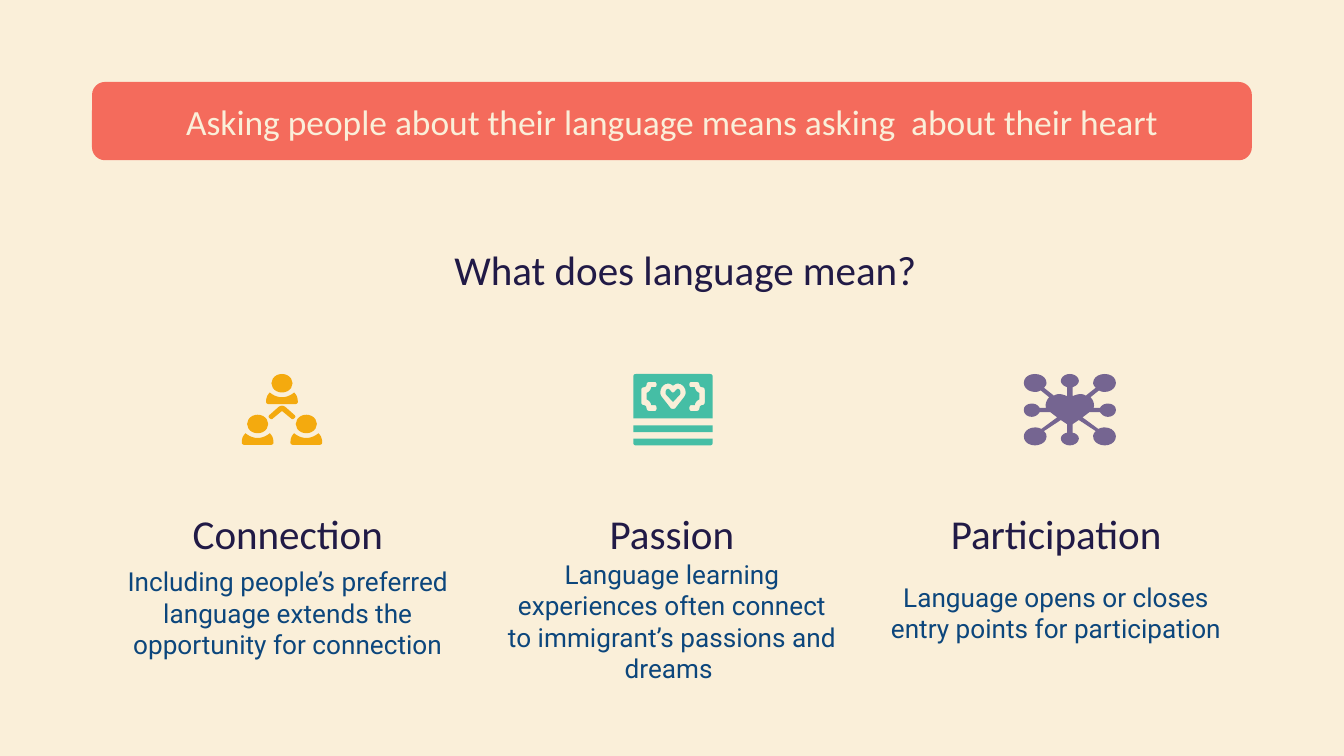
"""Build a slide on what language means: connection, passion, participation."""
import pptx
import pptx.dml.color
import pptx.enum.shapes
import pptx.enum.text
import pptx.util

Cm = pptx.util.Cm
KIND = pptx.enum.shapes.MSO_SHAPE
HUES = {"sand": "FAEFD9", "coral": "F46B5C", "ink": "211A46", "blue": "0C467C",
        "gold": "F4AA0E", "teal": "45BEA5", "plum": "756591"}
TITLE = "Asking people about their language means asking  about their heart"
ASK = "What does language mean?"
COLS = [
    ("Connection", "Including people’s preferred language extends the opportunity for connection", 10.63),
    ("Passion", "Language learning experiences often connect to immigrant’s passions and dreams ", 10.79),
    ("Participation", "Language opens or closes entry points for participation", 10.63),
]
LEFT, STEP, WIDE = 2.0, 7.26, 6.88
TOP = 7.07

# Half outlines: pairs are corners, six numbers are a cubic curve.
BODY = [(0, .09), (-.08, .09, -.16, .06, -.23, 0), (-.28, .05, -.3, .1, -.3, .18),
        (-.3, .2, -.28, .22, -.25, .22)]
ROOF = [(0, 0), (-.03, 0, -.04, .01, -.06, .02), (-.23, .17), (-.26, .19, -.26, .22, -.23, .24),
        (-.21, .26, -.19, .26, -.17, .24), (0, .1)]
CARD = [(0, 0), (-.7, 0), (-.73, 0, -.75, .02, -.75, .05), (-.75, .84)]
STRIP = [(0, .97), (-.75, .97), (-.75, 1.1)]
BASE = [(0, 1.22), (-.75, 1.22), (-.75, 1.3), (-.75, 1.33, -.73, 1.35, -.7, 1.35)]
HOLE = [(0, .22), (-.03, .2, -.06, .18, -.09, .18), (-.17, .18, -.24, .25, -.24, .35),
        (-.24, .39, -.22, .43, -.19, .46), (-.05, .64), (-.04, .66, -.02, .66, 0, .66)]
CORE = [(0, .35), (-.02, .35, -.03, .34, -.04, .32), (-.06, .3), (-.07, .29, -.08, .28, -.09, .28),
        (-.12, .28, -.14, .31, -.14, .35), (-.14, .37, -.14, .38, -.13, .39), (0, .53)]
BRACE = [(-.34, .15), (-.32, .15, -.31, .17, -.31, .2), (-.31, .23, -.32, .25, -.34, .25),
         (-.41, .25), (-.42, .3, -.45, .34, -.5, .36), (-.5, .48), (-.45, .5, -.42, .54, -.41, .59),
         (-.34, .59), (-.32, .59, -.31, .61, -.31, .65), (-.31, .68, -.32, .7, -.34, .7),
         (-.45, .7), (-.48, .7, -.5, .68, -.5, .65), (-.5, .61, -.53, .59, -.55, .59),
         (-.58, .59, -.6, .57, -.6, .54), (-.6, .3), (-.6, .27, -.58, .25, -.55, .25),
         (-.53, .25, -.5, .23, -.5, .2), (-.5, .17, -.48, .15, -.45, .15)]
WEB = [(0, 0), (-.09, 0, -.17, .06, -.17, .13), (-.17, .18, -.12, .23, -.05, .25),
       (-.05, .42), (-.1, .4, -.15, .38, -.2, .38), (-.24, .38, -.27, .39, -.3, .41),
       (-.49, .26), (-.46, .23, -.44, .2, -.44, .17), (-.44, .07, -.54, 0, -.66, 0),
       (-.78, 0, -.87, .07, -.87, .17), (-.87, .26, -.78, .34, -.66, .34),
       (-.62, .34, -.58, .33, -.55, .31), (-.39, .44), (-.45, .5, -.47, .58, -.45, .64),
       (-.57, .64), (-.6, .59, -.65, .56, -.72, .56), (-.81, .56, -.87, .61, -.87, .68),
       (-.87, .75, -.81, .81, -.72, .81), (-.65, .81, -.6, .77, -.57, .72),
       (-.37, .72), (-.24, .82), (-.54, 1.04), (-.57, 1.02, -.62, 1.01, -.66, 1.01),
       (-.78, 1.01, -.87, 1.09, -.87, 1.18), (-.87, 1.28, -.78, 1.35, -.66, 1.35),
       (-.54, 1.35, -.44, 1.28, -.44, 1.18), (-.44, 1.14, -.46, 1.11, -.49, 1.08),
       (-.17, .87), (-.05, .95), (-.05, 1.11), (-.12, 1.12, -.17, 1.17, -.17, 1.22),
       (-.17, 1.29, -.09, 1.35, 0, 1.35)]
FOLK = [(5.33, TOP), (4.87, 7.84), (5.79, 7.84)]

deck = pptx.Presentation()
deck.slide_width, deck.slide_height = Cm(25.4), Cm(14.29)
slide = deck.slides.add_slide(deck.slide_layouts[6])


def tint(hue):
    return pptx.dml.color.RGBColor.from_string(HUES[hue])


def paint(shape, hue):
    shape.shadow.inherit = False
    shape.fill.solid()
    shape.fill.fore_color.rgb = tint(hue)
    shape.line.fill.background()


def place(kind, x, y, w, h, hue):
    paint(slide.shapes.add_shape(kind, Cm(x), Cm(y), Cm(w), Cm(h)), hue)


def write(text, x, y, w, h, size, font, hue):
    frame = slide.shapes.add_textbox(Cm(x), Cm(y), Cm(w), Cm(h)).text_frame
    frame.word_wrap = True
    frame.vertical_anchor = pptx.enum.text.MSO_ANCHOR.MIDDLE
    frame.margin_left = frame.margin_right = Cm(.25)
    frame.margin_top = frame.margin_bottom = Cm(.25)
    para = frame.paragraphs[0]
    para.alignment = pptx.enum.text.PP_ALIGN.CENTER
    run = para.add_run()
    run.text = text
    run.font.size = pptx.util.Pt(size)
    run.font.name = font
    run.font.color.rgb = tint(hue)


def trace(path):
    dots = []
    for step in path:
        if len(step) == 2:
            dots.append(step)
            continue
        ends = [dots[-1], step[:2], step[2:4], step[4:]]
        for t in (.2, .4, .6, .8, 1):
            parts = ((1 - t) ** 3, 3 * t * (1 - t) ** 2, 3 * t * t * (1 - t), t ** 3)
            dots.append(tuple(sum(k * end[i] for k, end in zip(parts, ends)) for i in (0, 1)))
    return dots


def flip(dots):
    return [(-x, y) for x, y in reversed(dots)]


def whole(half):
    dots = trace(half)
    return dots + flip(dots)


def draw(loops, x, y, hue):
    loops = [[(Cm(x + a), Cm(y + b)) for a, b in loop] for loop in loops]
    pen = slide.shapes.build_freeform(*loops[0][0], scale=1.0)
    for loop in loops:
        if loop is not loops[0]:
            pen.move_to(*loop[0])
        pen.add_line_segments(loop[1:], close=True)
    paint(pen.convert_to_shape(), hue)


slide.background.fill.solid()
slide.background.fill.fore_color.rgb = tint("sand")
place(KIND.ROUNDED_RECTANGLE, 1.74, 1.55, 21.92, 1.48, "coral")
write(TITLE, LEFT, 1.5, 21.41, 1.6, 19, "Calibri", "sand")
write(ASK, 6.25, 4.42, 13.41, 1.35, 22, "Calibri", "ink")
for i, (head, text, y) in enumerate(COLS):
    x = LEFT + i * STEP
    write(head, x, 9.54, WIDE, 1.09, 22, "Calibri", "ink")
    write(text, x, y, WIDE, 1.9, 14, "Roboto", "blue")

for x, y in FOLK:
    place(KIND.OVAL, x - .2, y, .4, .35, "gold")
    draw([whole(BODY)], x, y + .35, "gold")
draw([whole(ROOF)], 5.33, 7.67, "gold")

mid = 12.72
brace = trace(BRACE)
draw([whole(CARD), whole(HOLE), brace, flip(brace)], mid, TOP, "teal")
for half in (CORE, STRIP, BASE):
    draw([whole(half)], mid, TOP, "teal")
draw([whole(WEB)], 20.22, TOP, "plum")

deck.save("out.pptx")
